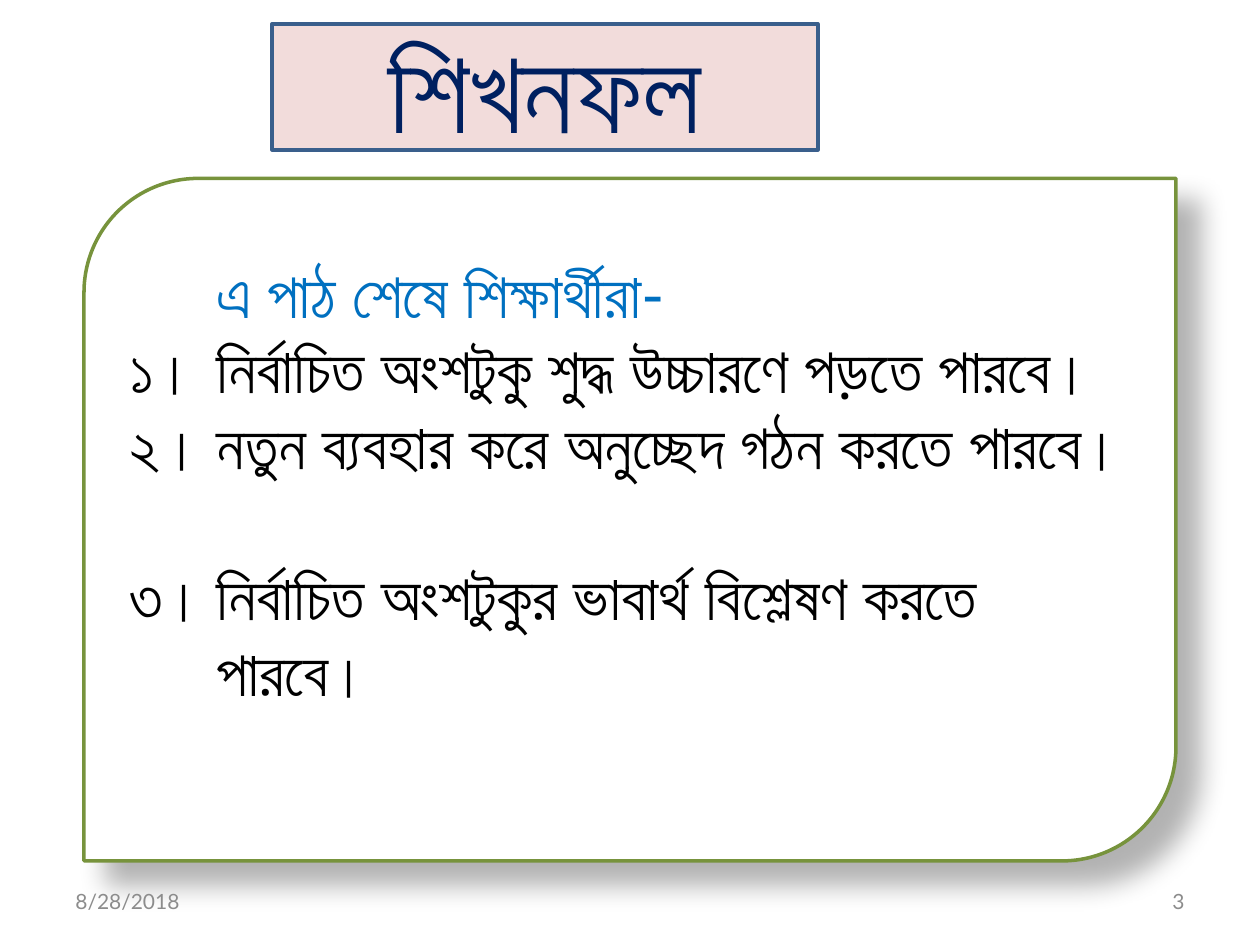
"""Build the learning-outcomes slide with a scroll title and a numbered panel."""
from lxml import etree
from pptx import Presentation
from pptx.dml.color import RGBColor
from pptx.enum.shapes import MSO_SHAPE
from pptx.enum.text import MSO_ANCHOR, PP_ALIGN
from pptx.oxml import parse_xml
from pptx.oxml.ns import nsdecls, qn
from pptx.util import Pt

PANEL = MSO_SHAPE.ROUND_2_DIAG_RECTANGLE
MIDDLE = MSO_ANCHOR.MIDDLE
LEFT, CENTER, RIGHT = PP_ALIGN.LEFT, PP_ALIGN.CENTER, PP_ALIGN.RIGHT
FONT = "Lato"
COLORS = {
    "pink": "F2DCDB", "steel": "3A5F8C", "navy": "002060", "white": "FFFFFF",
    "green": "77933C", "blue": "0070C0", "black": "000000", "gray": "8C8C8C",
}


def add_text(p, text, color, **formats):
    r = p.add_run()
    r.text = text
    r.font.color.rgb = RGBColor.from_string(COLORS[color])
    for name, value in {"name": FONT, **formats}.items():
        setattr(r.font, name, value)
    etree.SubElement(r.font._element, qn("a:cs"), typeface=FONT)


def paint(sp, fill, line):
    sp.fill.solid()
    sp.fill.fore_color.rgb = RGBColor.from_string(COLORS[fill])
    sp.line.color.rgb = RGBColor.from_string(COLORS[line])
    sp.line.width = Pt(2)


prs = Presentation()
prs.slide_width, prs.slide_height = Pt(720), Pt(540)
s = prs.slides.add_slide(prs.slide_layouts[5])

title = s.shapes.title
title.left, title.top, title.width, title.height = Pt(155.5), Pt(13.7), Pt(311.8), Pt(72)
title._element.spPr.append(parse_xml(
    f'<a:prstGeom {nsdecls("a")} prst="verticalScroll"><a:avLst/></a:prstGeom>'))
paint(title, "pink", "steel")
tf = title.text_frame
tf.vertical_anchor = MIDDLE
p = tf.paragraphs[0]
p.alignment = CENTER
add_text(p, "শিখনফল", "navy", size=Pt(66), bold=True)

panel = s.shapes.add_shape(PANEL, Pt(48), Pt(102), Pt(624), Pt(390))
panel.adjustments[0] = 0.167
paint(panel, "white", "green")
panel._element.spPr.append(parse_xml(
    f'<a:effectLst {nsdecls("a")}>'
    '<a:outerShdw blurRad="190500" dist="228600" dir="2700000" algn="ctr" rotWithShape="0">'
    '<a:srgbClr val="000000"><a:alpha val="30000"/></a:srgbClr>'
    '</a:outerShdw></a:effectLst>'))
tf = panel.text_frame
tf.word_wrap = True
tf.vertical_anchor = MIDDLE
tf.margin_bottom = Pt(46.8)

lines = [
    ("\tএ পাঠ শেষে শিক্ষার্থীরা-", "blue", 0),
    ("১।\tনির্বাচিত অংশটুকু শুদ্ধ উচ্চারণে পড়তে পারবে।", "black", 0),
    ("২।\tনতুন ব্যবহার করে অনুচ্ছেদ গঠন করতে পারবে।", "black", 0),
    ("৩।\tনির্বাচিত অংশটুকুর ভাবার্থ বিশ্লেষণ করতে পারবে।", "black", 43.2),
]
for i, (text, color, gap) in enumerate(lines):
    p = tf.add_paragraph() if i else tf.paragraphs[0]
    p.alignment = LEFT
    if gap:
        p.space_before = Pt(gap)
    pPr = p._p.get_or_add_pPr()
    pPr.set("marL", str(Pt(49.5)))
    pPr.set("indent", str(Pt(-49.5)))
    add_text(p, text, color, size=Pt(36))

for text, left, align in [("3", 516, RIGHT), ("8/28/2018", 36, LEFT)]:
    tf = s.shapes.add_textbox(Pt(left), Pt(500.5), Pt(168), Pt(28.75)).text_frame
    tf.word_wrap = True
    tf.vertical_anchor = MIDDLE
    p = tf.paragraphs[0]
    p.alignment = align
    add_text(p, text, "gray", size=Pt(12))

prs.save("out.pptx")
